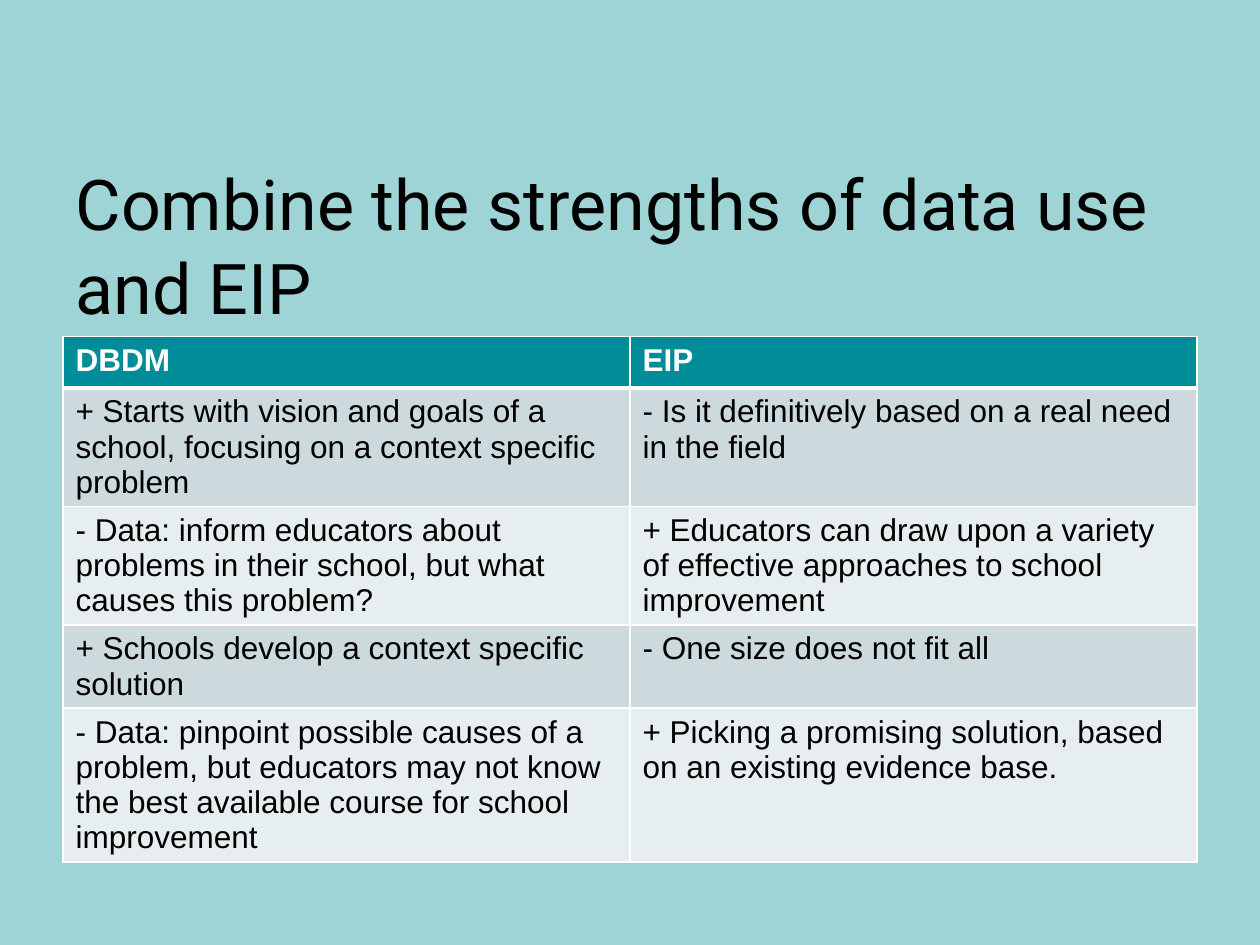
import pptx
import pptx.dml.color
import pptx.enum.text
import pptx.oxml
import pptx.oxml.ns
import pptx.util

ROWS = [
    ("DBDM", "EIP"),
    ("+ Starts with vision and goals of a school, focusing on a context specific problem",
     "- Is it definitively based on a real need in the field"),
    ("- Data: inform educators about problems in their school, but what causes this problem?",
     "+ Educators can draw upon a variety of effective approaches to school improvement"),
    ("+ Schools develop a context specific solution",
     "- One size does not fit all"),
    ("- Data: pinpoint possible causes of a problem, but educators may not know the best "
     "available course for school improvement",
     "+ Picking a promising solution, based on an existing evidence base."),
]


def rgb(value):
    return pptx.dml.color.RGBColor.from_string(value)


class Deck:
    WIDTH, HEIGHT = 10, 7.5
    MARGIN = 0.05
    BACKGROUND, RULE = "9FD4D7", "FFFFFF"
    HEADER_FILL, BANDS = "008C99", ("CCDADE", "E7EEEF")
    TITLE = {"name": "Roboto", "size": pptx.util.Pt(40), "bold": False, "color": "000000"}
    HEADER = {"name": "Arial", "size": pptx.util.Pt(18), "bold": True, "color": "FFFFFF"}
    BODY = {**HEADER, "bold": False, "color": "000000"}

    def __init__(self):
        self.prs = pptx.Presentation()
        self.prs.slide_width = pptx.util.Inches(self.WIDTH)
        self.prs.slide_height = pptx.util.Inches(self.HEIGHT)
        self.s = self.prs.slides.add_slide(self.prs.slide_layouts[5])
        fill = self.s.background.fill
        fill.solid()
        fill.fore_color.rgb = rgb(self.BACKGROUND)

    def box(self, top, height):
        w, h = self.prs.slide_width, self.prs.slide_height
        return (int(w * self.MARGIN), int(h * top),
                int(w * (1 - 2 * self.MARGIN)), int(h * height))

    def add_text(self, tf, text, style):
        p = tf.paragraphs[0]
        p.alignment = pptx.enum.text.PP_ALIGN.LEFT
        r = p.add_run()
        r.text = text
        for key, value in style.items():
            if key == "color":
                r.font.color.rgb = rgb(value)
            else:
                setattr(r.font, key, value)

    def title(self, text, top, height):
        sp = self.s.shapes.title
        sp.left, sp.top, sp.width, sp.height = self.box(top, height)
        tf = sp.text_frame
        frame = {"word_wrap": True, "auto_size": pptx.enum.text.MSO_AUTO_SIZE.NONE,
                 "vertical_anchor": pptx.enum.text.MSO_ANCHOR.TOP}
        for key, value in frame.items():
            setattr(tf, key, value)
        self.add_text(tf, text, self.TITLE)

    def border(self, cell, side, points):
        cell._tc.get_or_add_tcPr().append(pptx.oxml.parse_xml(
            f'<a:ln{side} {pptx.oxml.ns.nsdecls("a")} w="{pptx.util.Pt(points)}">'
            f'<a:solidFill><a:srgbClr val="{self.RULE}"/></a:solidFill></a:ln{side}>'))

    def table(self, rows, top, row_height):
        shape = self.s.shapes.add_table(
            len(rows), len(rows[0]), *self.box(top, row_height * len(rows)))
        for i, row in enumerate(rows):
            for j, text in enumerate(row):
                cell = shape.table.cell(i, j)
                for side in "LRTB":
                    heavy = (i, side) in ((0, "B"), (1, "T"))
                    self.border(cell, side, 3 if heavy else 1)
                cell.fill.solid()
                cell.fill.fore_color.rgb = rgb(self.BANDS[(i - 1) % 2] if i else self.HEADER_FILL)
                self.add_text(cell.text_frame, text, self.BODY if i else self.HEADER)

    def save(self):
        self.prs.save("out.pptx")


def main():
    deck = Deck()
    deck.title("Combine the strengths of data use and EIP", top=1.22 / 7.5, height=1.06 / 7.5)
    deck.table(ROWS, top=2.67 / 7.5, row_height=0.41 / 7.5)
    deck.save()


if __name__ == "__main__":
    main()
